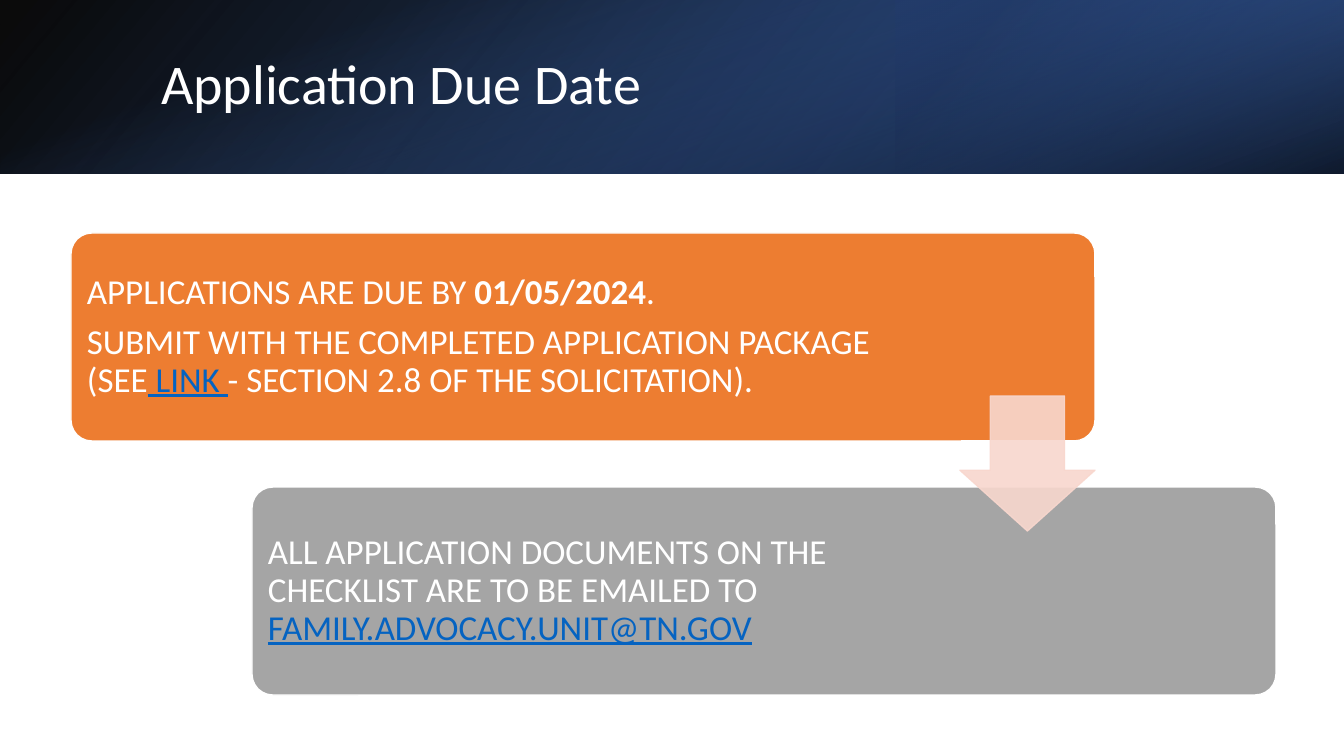
from dataclasses import dataclass
from typing import Any

from lxml.etree import SubElement
from pptx import Presentation
from pptx.dml.color import RGBColor
from pptx.enum.shapes import MSO_SHAPE
from pptx.enum.text import MSO_ANCHOR, MSO_AUTO_SIZE, PP_ALIGN
from pptx.oxml.ns import qn
from pptx.util import Emu, Pt

PX = 12192000 / 1344
COLOURS = {
    "white": "FFFFFF",
    "black": "000000",
    "navy": "203864",
    "deep": "2F5597",
    "blue": "4472C4",
    "orange": "ED7D31",
    "grey": "A5A5A5",
    "pink": "F8D7CE",
    "link": "0563C1",
}


@dataclass(frozen=True)
class Stop:
    position: float
    colour: str
    opacity: int


@dataclass(frozen=True)
class Band:
    box: tuple[int, int, int, int]
    angle: int
    stops: tuple[Stop, Stop]
    rotation: int = 0
    flipped: bool = False


@dataclass(frozen=True)
class Span:
    text: str
    colour: str = "white"
    bold: bool = False
    underline: bool = False


@dataclass(frozen=True)
class Card:
    colour: str
    text_width: int
    paras: tuple[tuple[Span, ...], ...]


BANDS = (
    Band((0, 0, 1344, 174), 140,
         (Stop(0, "black", 96), Stop(1, "deep", 100)), flipped=True),
    Band((896, 0, 448, 174), 320,
         (Stop(0.19, "navy", 68), Stop(1, "blue", 79)), rotation=180, flipped=True),
    Band((585, -585, 174, 1344), 340,
         (Stop(0.23, "blue", 0), Stop(0.99, "black", 74)), rotation=90),
)
BANDS_OPACITY_FULL = 100
CARDS = (
    Card("orange", 809, (
        (Span("APPLICATIONS ARE DUE BY "), Span("01/05/2024", bold=True), Span(".")),
        (Span("SUBMIT WITH THE COMPLETED APPLICATION PACKAGE (SEE"),
         Span(" LINK ", "link", underline=True),
         Span("- SECTION 2.8 OF THE SOLICITATION).")),
    )),
    Card("grey", 696, (
        (Span("ALL APPLICATION DOCUMENTS ON THE CHECKLIST ARE TO BE EMAILED TO "),
         Span("FAMILY.ADVOCACY.UNIT@TN.GOV", "link", underline=True)),
    )),
)
CARD_LEFT, CARD_TOP, CARD_WIDTH, CARD_HEIGHT = 71, 233, 1024, 208
STEP_X, STEP_Y, TEXT_OFFSET = 181, 254, 6


def px(length: int) -> Emu:
    return Emu(round(length * PX))


def rgb(name: str) -> RGBColor:
    return RGBColor.from_string(COLOURS[name])


def apply(target: Any, values: dict[str, Any]) -> None:
    for name, value in values.items():
        setattr(target, name, value)


def set_opacity(colour_node: Any, percent: int) -> None:
    if percent < BANDS_OPACITY_FULL:
        SubElement(colour_node, qn("a:alpha")).set("val", str(percent * 1000))


def add_plain_shape(page: Any, kind: MSO_SHAPE, box: tuple[int, int, int, int]) -> Any:
    shape = page.shapes.add_shape(kind, *map(px, box))
    shape.shadow.inherit = False
    return shape


def paint(shape: Any, colour: str) -> None:
    shape.fill.solid()
    shape.fill.fore_color.rgb = rgb(colour)


def outline(shape: Any, colour: str) -> None:
    shape.line.color.rgb = rgb(colour)
    shape.line.width = Pt(1)


def draw_band(page: Any, band: Band) -> None:
    shape = add_plain_shape(page, MSO_SHAPE.RECTANGLE, band.box)
    shape.rotation = band.rotation
    shape.line.fill.background()
    shape.fill.gradient()
    shape.fill.gradient_angle = 360 - band.angle
    properties = shape._element.spPr
    if band.flipped:
        properties.find(qn("a:xfrm")).set("flipH", "1")
    for target, stop in zip(shape.fill.gradient_stops, band.stops):
        target.position = stop.position
        target.color.rgb = rgb(stop.colour)
    for node, stop in zip(properties.iter(qn("a:srgbClr")), band.stops):
        set_opacity(node, stop.opacity)


def write_span(para: Any, span: Span, size: int) -> None:
    run = para.add_run()
    run.text = span.text
    apply(run.font, {"name": "Calibri", "size": Pt(size), "bold": span.bold,
                     "underline": span.underline})
    run.font.color.rgb = rgb(span.colour)


def draw_title(page: Any, text: str) -> None:
    title = page.shapes.title
    page.shapes._spTree.append(title._element)
    apply(title, {"left": px(151), "top": px(38), "width": px(1107), "height": px(97)})
    apply(title.text_frame, {"vertical_anchor": MSO_ANCHOR.MIDDLE,
                             "word_wrap": True, "auto_size": MSO_AUTO_SIZE.NONE})
    para = title.text_frame.paragraphs[0]
    apply(para, {"alignment": PP_ALIGN.LEFT, "line_spacing": 0.9})
    write_span(para, Span(text), 40)


def draw_card(page: Any, card: Card, index: int) -> None:
    left, top = CARD_LEFT + index * STEP_X, CARD_TOP + index * STEP_Y
    shape = add_plain_shape(page, MSO_SHAPE.ROUNDED_RECTANGLE,
                            (left, top, CARD_WIDTH, CARD_HEIGHT))
    shape.adjustments[0] = 0.1
    paint(shape, card.colour)
    outline(shape, "white")
    box = page.shapes.add_textbox(px(left + TEXT_OFFSET), px(top + TEXT_OFFSET),
                                  px(card.text_width), px(CARD_HEIGHT - 2 * TEXT_OFFSET))
    frame = box.text_frame
    apply(frame, {"word_wrap": True, "vertical_anchor": MSO_ANCHOR.MIDDLE})
    apply(frame, {f"margin_{side}": px(10) for side in ("left", "top", "right", "bottom")})
    for number, spans in enumerate(card.paras):
        para = frame.add_paragraph() if number else frame.paragraphs[0]
        apply(para, {"line_spacing": 0.9, "space_after": Pt(8.75)})
        for span in spans:
            write_span(para, span, 25)


def draw_arrow(page: Any) -> None:
    arrow = add_plain_shape(page, MSO_SHAPE.DOWN_ARROW, (960, 396, 135, 135))
    arrow.adjustments[0] = 0.55
    arrow.adjustments[1] = 0.45
    paint(arrow, "pink")
    outline(arrow, "pink")
    for node in arrow._element.spPr.iter(qn("a:srgbClr")):
        set_opacity(node, 90)


def main() -> None:
    deck = Presentation()
    apply(deck, {"slide_width": px(1344), "slide_height": px(756)})
    page = deck.slides.add_slide(deck.slide_layouts[5])
    for band in BANDS:
        draw_band(page, band)
    draw_title(page, "Application Due Date")
    for index, card in enumerate(CARDS):
        draw_card(page, card, index)
    draw_arrow(page)
    deck.save("out.pptx")


if __name__ == "__main__":
    main()
